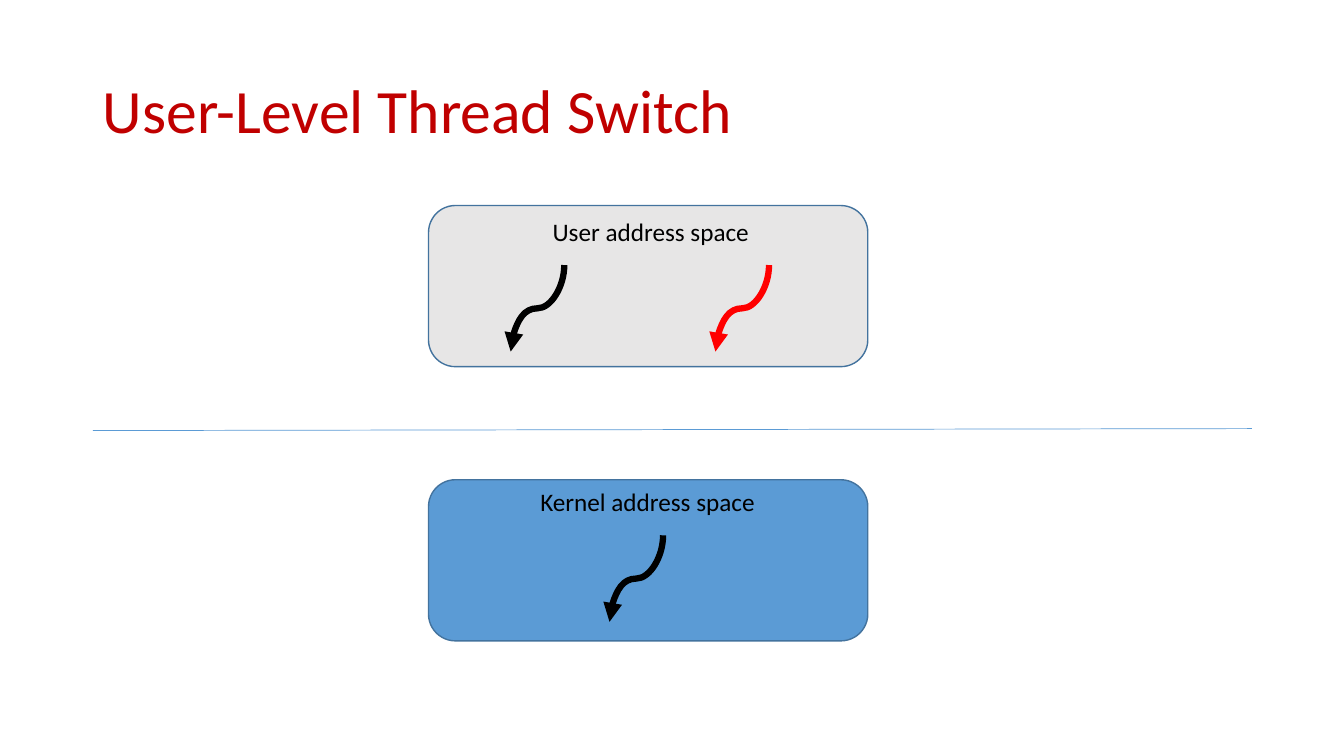
from dataclasses import dataclass

from lxml import etree
from pptx import Presentation
from pptx.dml.color import RGBColor
from pptx.enum.shapes import MSO_CONNECTOR, MSO_SHAPE
from pptx.enum.text import MSO_ANCHOR, MSO_AUTO_SIZE, PP_ALIGN
from pptx.oxml.ns import qn
from pptx.shapes.connector import Connector
from pptx.slide import Slide
from pptx.text.text import TextFrame
from pptx.util import Cm, Pt

STRAIGHT, CURVE = MSO_CONNECTOR.STRAIGHT, MSO_CONNECTOR.CURVE
ROUNDED = MSO_SHAPE.ROUNDED_RECTANGLE
LEFT, CENTER = PP_ALIGN.LEFT, PP_ALIGN.CENTER
MIDDLE = MSO_ANCHOR.MIDDLE
GROW, FIXED = MSO_AUTO_SIZE.SHAPE_TO_FIT_TEXT, MSO_AUTO_SIZE.NONE

FONT = "Calibri"
BLUE, BLACK, RED = "5B9BD5", "000000", "FF0000"

# Shared sizes in centimetres
SPACE_LEFT, SPACE_WIDTH, SPACE_HEIGHT = 10.8, 11.07, 4.06
LABEL_WIDTH, LABEL_HEIGHT = 7.04, 1.02
THREAD_SHIFT, THREAD_DROP = 1.35, 2.18


@dataclass(frozen=True)
class AddressSpace:
    label: str
    top: float
    fill: str
    label_left: float
    label_top: float


@dataclass(frozen=True)
class Thread:
    """A wavy arrow running down and to the left from its start."""
    x: float
    y: float
    color: str


SPACES = (
    AddressSpace("User address space", 5.18, "E7E6E6", 12.88, 5.33),
    AddressSpace("Kernel address space", 12.09, BLUE, 12.8, 12.14),
)
THREADS = (
    Thread(14.22, 6.68, BLACK),
    Thread(19.38, 6.68, RED),
    Thread(16.71, 13.49, BLACK),
)


def rgb(color: str) -> RGBColor:
    return RGBColor.from_string(color)


def write(frame: TextFrame, text: str, size: float, color: str, align: PP_ALIGN) -> None:
    frame.word_wrap = True
    paragraph = frame.paragraphs[0]
    paragraph.alignment = align
    run = paragraph.add_run()
    run.text = text
    run.font.name = FONT
    run.font.size = Pt(size)
    run.font.color.rgb = rgb(color)


def style_connector(connector: Connector, color: str, width: float) -> None:
    connector.line.color.rgb = rgb(color)
    connector.line.width = Pt(width)
    etree.SubElement(connector._element.spPr, qn("a:effectLst"))


def draw_title(slide: Slide, text: str) -> None:
    title = slide.shapes.title
    title.left, title.top = Cm(2.34), Cm(1.02)
    title.width, title.height = Cm(29.21), Cm(3.68)
    frame = title.text_frame
    frame.vertical_anchor = MIDDLE
    frame.auto_size = FIXED
    write(frame, text, 44, "C00000", LEFT)
    frame.paragraphs[0].line_spacing = 0.9


def draw_space(slide: Slide, space: AddressSpace) -> None:
    group = slide.shapes.add_group_shape()
    box = group.shapes.add_shape(ROUNDED, Cm(SPACE_LEFT), Cm(space.top),
                                 Cm(SPACE_WIDTH), Cm(SPACE_HEIGHT))
    box.shadow.inherit = False
    box.fill.solid()
    box.fill.fore_color.rgb = rgb(space.fill)
    box.line.color.rgb = rgb("43739E")
    box.line.width = Pt(1)

    label = group.shapes.add_textbox(Cm(space.label_left), Cm(space.label_top),
                                     Cm(LABEL_WIDTH), Cm(LABEL_HEIGHT))
    write(label.text_frame, space.label, 18, BLACK, CENTER)
    label.text_frame.auto_size = GROW


def draw_thread(slide: Slide, thread: Thread) -> None:
    # The curve lies flat around its centre, then turns a quarter clockwise
    center_x = thread.x - THREAD_SHIFT / 2
    center_y = thread.y + THREAD_DROP / 2
    half_length, half_height = THREAD_DROP / 2, THREAD_SHIFT / 2
    arrow = slide.shapes.add_connector(
        CURVE,
        Cm(center_x - half_length), Cm(center_y - half_height),
        Cm(center_x + half_length), Cm(center_y + half_height))
    style_connector(arrow, thread.color, 4.5)
    properties = arrow._element.spPr
    properties.find(qn("a:xfrm")).set("rot", str(90 * 60000))
    etree.SubElement(properties.find(qn("a:ln")), qn("a:tailEnd"), type="triangle")


def main() -> None:
    deck = Presentation()
    deck.slide_width, deck.slide_height = Cm(33.87), Cm(19.05)
    slide = deck.slides.add_slide(deck.slide_layouts.get_by_name("Title Only"))

    draw_title(slide, "User-Level Thread Switch")

    # Border between user and kernel mode
    mode_border = slide.shapes.add_connector(STRAIGHT, Cm(2.34), Cm(10.85),
                                             Cm(31.55), Cm(10.8))
    style_connector(mode_border, BLUE, 0.5)

    # Address spaces and the threads in them
    for space in SPACES:
        draw_space(slide, space)
    for thread in THREADS:
        draw_thread(slide, thread)

    deck.save("out.pptx")


if __name__ == "__main__":
    main()
